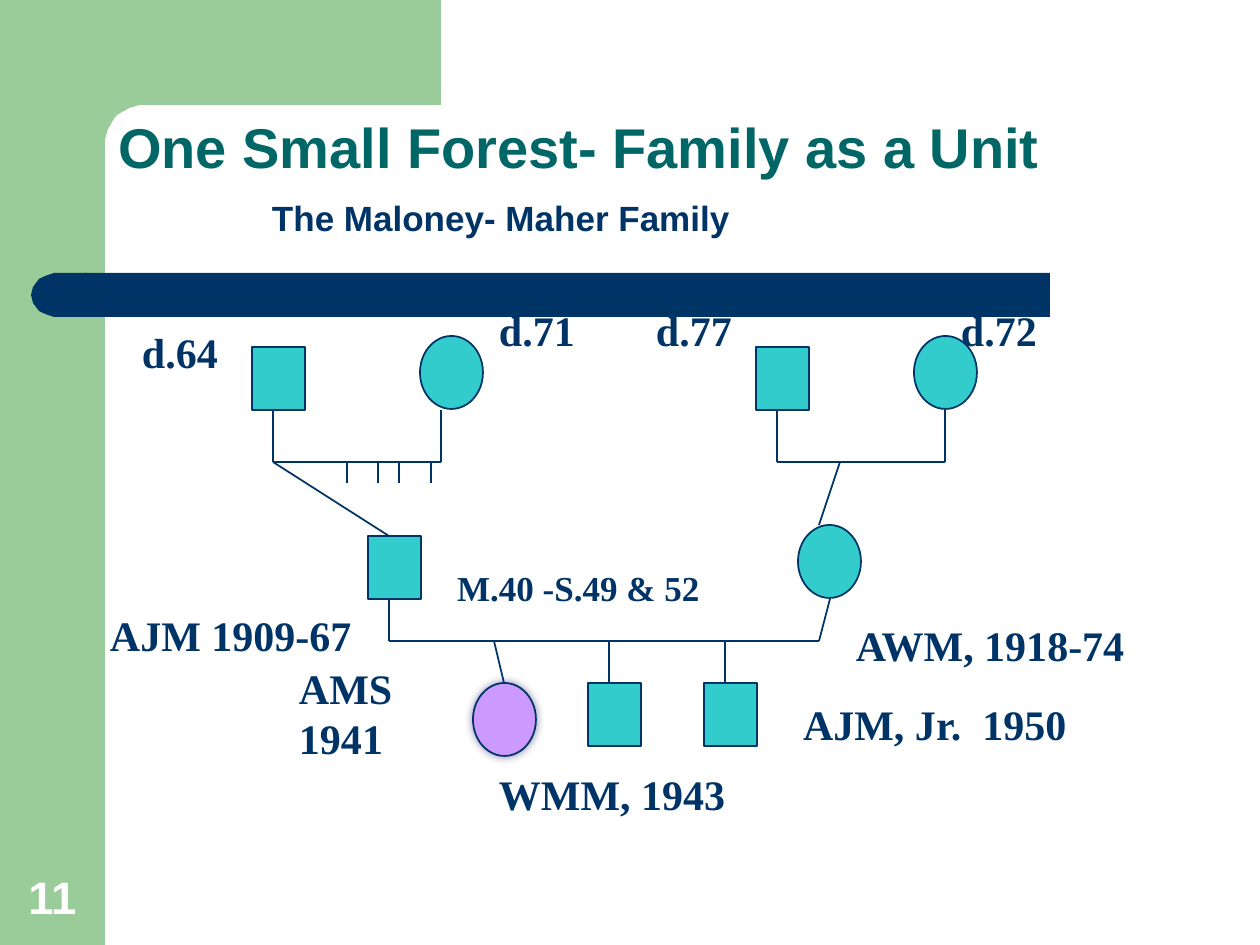
from math import cos, pi, sin

from lxml.etree import SubElement
from pptx import Presentation
from pptx.dml.color import RGBColor
from pptx.enum.shapes import MSO_CONNECTOR, MSO_SHAPE
from pptx.enum.text import MSO_ANCHOR, PP_ALIGN
from pptx.oxml.ns import qn
from pptx.util import Pt

SCALE = 914400 / 126
NAVY, GREEN, TEAL, AQUA, LILAC = "003366", "99CC99", "006666", "33CCCC", "CC99FF"


def px(*vals):
    return [round(v * SCALE) for v in vals]


def tint(code):
    return RGBColor.from_string(code)


def arc(x, y, wide, high, start, end):
    turns = [(start + (end - start) * i / 16) * pi / 180 for i in range(17)]
    return [(round(x + wide * cos(t)), round(y + high * sin(t))) for t in turns]


class Chart:
    """Draws a family tree on one slide in a shared style."""

    def __init__(self, slide):
        self.slide = slide
        self.shapes = slide.shapes

    def paint(self, shape, fill, line=None):
        shape.shadow.inherit = False
        shape.fill.solid()
        shape.fill.fore_color.rgb = tint(fill)
        if line:
            shape.line.color.rgb = tint(line)
            shape.line.width = Pt(1)
        else:
            shape.line.fill.background()
        return shape

    def block(self, kind, x, y, w, h, fill, line=None):
        return self.paint(self.shapes.add_shape(kind, *px(x, y, w, h)), fill, line)

    def man(self, x, y):
        return self.block(MSO_SHAPE.RECTANGLE, x, y, 53, 63, AQUA, NAVY)

    def woman(self, x, y, fill=AQUA):
        return self.block(MSO_SHAPE.OVAL, x, y, 63, 73, fill, NAVY)

    def glow(self, shape):
        effects = shape._element.spPr.find(qn("a:effectLst"))
        shade = SubElement(effects, qn("a:outerShdw"), blurRad=str(Pt(5)), dist="0", dir="0")
        color = SubElement(shade, qn("a:srgbClr"), val="666699")
        SubElement(color, qn("a:alpha"), val="75000")

    def outline(self, points, fill):
        build = self.shapes.build_freeform(*points[0], scale=SCALE)
        build.add_line_segments(points[1:], close=True)
        self.paint(build.convert_to_shape(), fill)

    def link(self, *ends):
        line = self.shapes.add_connector(MSO_CONNECTOR.STRAIGHT, *px(*ends))
        line.line.color.rgb = tint(NAVY)
        line.line.width = Pt(1)
        SubElement(line._element.spPr, qn("a:effectLst"))

    def style(self, shape, text, size, font, color, pads, anchor=MSO_ANCHOR.TOP,
              align=PP_ALIGN.LEFT):
        frame = shape.text_frame
        frame.word_wrap = True
        frame.vertical_anchor = anchor
        (frame.margin_left, frame.margin_top,
         frame.margin_right, frame.margin_bottom) = px(*pads)
        frame.text = text
        para = frame.paragraphs[0]
        para.alignment = align
        para.font.size, para.font.name, para.font.bold = Pt(size), font, True
        para.font.color.rgb = tint(color)
        return para

    def title(self, text, x, y, w, h):
        shape = self.shapes.title
        shape.left, shape.top, shape.width, shape.height = px(x, y, w, h)
        para = self.style(shape, text, 32, "Arial", TEAL, (13, 8, 18, 8), MSO_ANCHOR.BOTTOM)
        para.line_spacing = 0.9

    def text(self, text, x, y, w, h, size=24, font="Times New Roman", color=NAVY,
             pads=(5, 0, 5, 0), **rest):
        box = self.shapes.add_textbox(*px(x, y, w, h))
        self.style(box, text, size, font, color, pads, **rest)


def main():
    deck = Presentation()
    deck.slide_width, deck.slide_height = px(1260, 945)
    tree = Chart(deck.slides.add_slide(deck.slide_layouts[5]))

    tree.block(MSO_SHAPE.RECTANGLE, 0, 0, 105, 945, GREEN)
    bend = arc(144, 144, 39, 39, 270, 180)
    tree.outline([(63, 0), (441, 0), (441, 105)] + bend + [(105, 161), (63, 161)], GREEN)
    tree.block(MSO_SHAPE.RECTANGLE, 84, 273, 966, 44, NAVY)
    tree.outline(arc(59, 295, 28, 22, 270, 90) + [(86, 317), (86, 273)], NAVY)

    tree.text("11", 19, 857, 67, 67, 26, "Arial", "FFFFFF", (0, 0, 0, 0),
              anchor=MSO_ANCHOR.BOTTOM, align=PP_ALIGN.CENTER)
    tree.title("One Small Forest- Family as a Unit", 105, 0, 1061, 189)
    tree.text("The Maloney- Maher Family", 76, 189, 1126, 756, 20, "Arial",
              pads=(196, 8, 18, 8))

    for spot in [(252, 347), (756, 347), (368, 536), (588, 683), (704, 683)]:
        tree.man(*spot)
    for spot in [(420, 336), (914, 336), (798, 525)]:
        tree.woman(*spot)
    tree.glow(tree.woman(473, 683, LILAC))

    for left, right in [(273, 441), (777, 945)]:
        tree.link(left, 462, right, 462)
        for x in (left, right):
            tree.link(x, 410, x, 462)
    for x in (347, 378, 399, 431):
        tree.link(x, 462, x, 483)
    tree.link(273, 462, 389, 536)
    tree.link(840, 462, 819, 525)
    tree.link(389, 599, 389, 641)
    tree.link(389, 641, 819, 641)
    tree.link(819, 641, 830, 599)
    for top, foot in [(494, 504), (609, 609), (725, 725)]:
        tree.link(top, 641, foot, 683)

    for label in [
        ("d.64", 137, 326, 116, 59),
        ("d.71", 494, 305, 116, 59),
        ("d.77", 651, 305, 147, 59),
        ("d.72", 956, 305, 179, 59),
        ("M.40 -S.49 & 52", 452, 567, 347, 53, 20),
        ("AJM 1909-67", 105, 609, 315, 59),
        ("AWM, 1918-74", 851, 620, 368, 59),
        ("AMS 1941", 294, 662, 136, 107),
        ("AJM, Jr.  1950", 798, 699, 336, 62),
        ("WMM, 1943", 494, 769, 420, 64),
    ]:
        tree.text(*label)
    deck.save("out.pptx")


if __name__ == "__main__":
    main()
